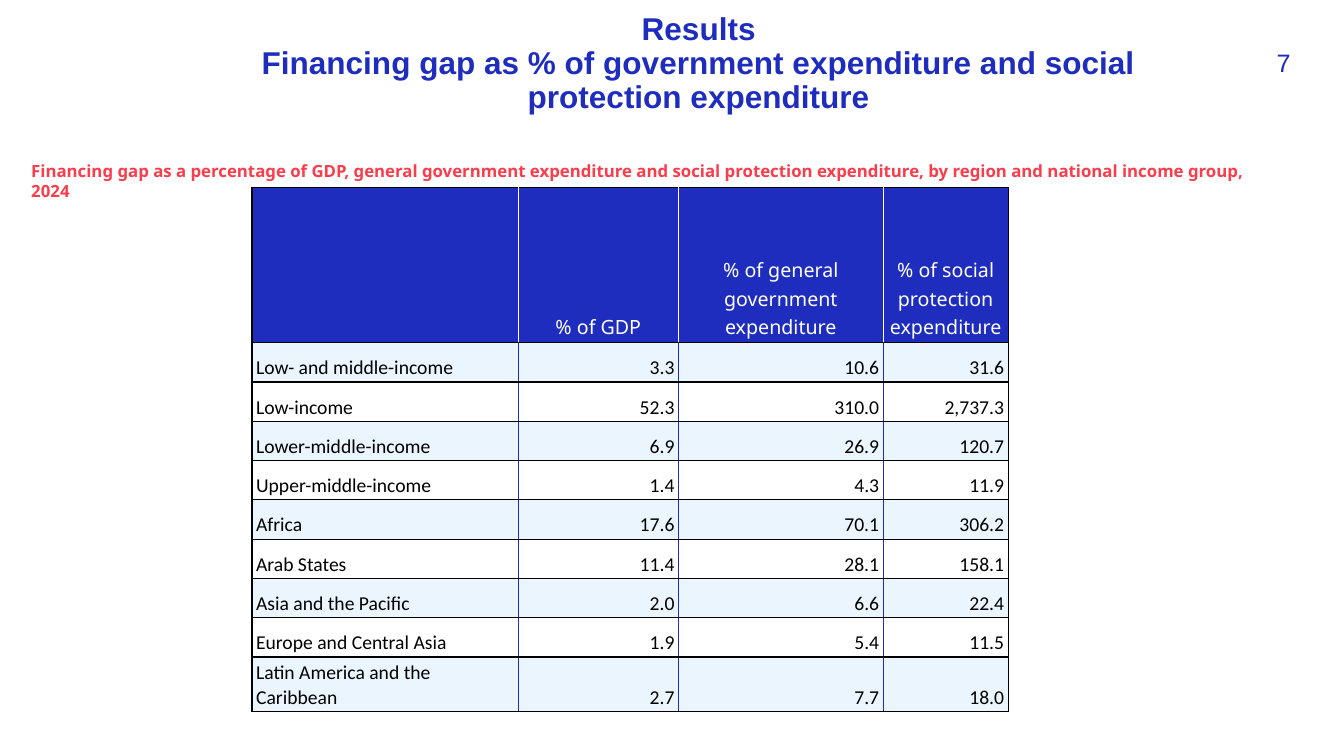
from lxml.etree import SubElement
from pptx import Presentation
from pptx.dml.color import RGBColor
from pptx.enum.text import MSO_ANCHOR as Anchor, PP_ALIGN as Align
from pptx.oxml.ns import qn
from pptx.util import Pt

PX = 9144
BLUE = RGBColor(0x1E, 0x2D, 0xBE)
RED = RGBColor(0xFA, 0x3C, 0x4B)
PALE = RGBColor(0xEB, 0xF5, 0xFD)
WHITE = RGBColor(0xFF, 0xFF, 0xFF)
BLACK = RGBColor(0, 0, 0)

TITLE = ("Results\nFinancing gap as % of government expenditure "
         "and social protection expenditure")
CAPTION = ("Financing gap as a percentage of GDP, general government expenditure and "
           "social protection expenditure, by region and national income group, 2024")
ROWS = [
    ("", "% of GDP", "% of general government expenditure",
     "% of social protection expenditure"),
    ("Low- and middle-income", "3.3", "10.6", "31.6"),
    ("Low-income", "52.3", "310.0", "2,737.3"),
    ("Lower-middle-income", "6.9", "26.9", "120.7"),
    ("Upper-middle-income", "1.4", "4.3", "11.9"),
    ("Africa", "17.6", "70.1", "306.2"),
    ("Arab States", "11.4", "28.1", "158.1"),
    ("Asia and the Pacific", "2.0", "6.6", "22.4"),
    ("Europe and Central Asia", "1.9", "5.4", "11.5"),
    ("Latin America and the Caribbean", "2.7", "7.7", "18.0"),
]
COLUMN_WIDTHS = [264, 159, 203, 124]
HEADER_HEIGHT = 154
ROW_HEIGHT = 39


def style(para, size, face, color, bold=False, align=Align.LEFT, spacing=None):
    para.alignment = align
    para.line_spacing = spacing
    for span in para.runs:
        span.font.size = Pt(size)
        span.font.name = face
        span.font.bold = bold
        span.font.color.rgb = color


def set_margins(target, across, down):
    target.margin_left = target.margin_right = across * PX
    target.margin_top = target.margin_bottom = down * PX


def add_label(page, area, text, *look, **layout):
    box = page.shapes.add_textbox(*(length * PX for length in area))
    frame = box.text_frame
    frame.word_wrap = True
    set_margins(frame, 0, 0)
    para = frame.paragraphs[0]
    para.text = text
    style(para, *look, **layout)


def add_borders(cell, left, right):
    properties = cell._tc.get_or_add_tcPr()
    for side, color in zip("LRTB", (left, right, BLACK, BLACK)):
        line = SubElement(properties, qn(f"a:ln{side}"), w=str(Pt(1)))
        fill = SubElement(line, qn("a:solidFill"))
        SubElement(fill, qn("a:srgbClr"), val=str(color))


def fill_cell(cell, text, row, column):
    header = row == 0
    inner = WHITE if header else BLUE
    last = len(COLUMN_WIDTHS) - 1
    add_borders(cell, BLACK if column == 0 else inner, BLACK if column == last else inner)
    if header or row % 2:
        cell.fill.solid()
        cell.fill.fore_color.rgb = BLUE if header else PALE
    else:
        cell.fill.background()
    cell.vertical_anchor = Anchor.BOTTOM
    set_margins(cell, 4, 2)
    para = cell.text_frame.paragraphs[0]
    para.text = text
    if header:
        style(para, 14, "Noto Sans", WHITE, align=Align.CENTER, spacing=1.07)
    else:
        align = Align.RIGHT if column else Align.LEFT
        style(para, 14, "Calibri", BLACK, align=align, spacing=1.07)


def add_gap_table(page, left, top):
    height = HEADER_HEIGHT + ROW_HEIGHT * (len(ROWS) - 1)
    table = page.shapes.add_table(
        len(ROWS), len(COLUMN_WIDTHS),
        left * PX, top * PX, sum(COLUMN_WIDTHS) * PX, height * PX).table
    for column, width in zip(table.columns, COLUMN_WIDTHS):
        column.width = width * PX
    for row, texts in enumerate(ROWS):
        table.rows[row].height = (ROW_HEIGHT if row else HEADER_HEIGHT) * PX
        for column, text in enumerate(texts):
            fill_cell(table.cell(row, column), text, row, column)


def build_results(page):
    add_label(page, (234, 13, 918, 43), TITLE, 22.5, "Arial", BLUE,
              bold=True, align=Align.CENTER, spacing=0.9)
    add_label(page, (1221, 47, 59, 31), "7", 18, "Arial", BLUE, align=Align.RIGHT)
    add_label(page, (31, 159, 1226, 43), CAPTION, 12, "Noto Sans", RED, bold=True)
    add_gap_table(page, 250, 186)


def main():
    deck = Presentation()
    deck.slide_width = 1333 * PX
    deck.slide_height = 750 * PX
    build_results(deck.slides.add_slide(deck.slide_layouts[6]))
    deck.save("out.pptx")


if __name__ == "__main__":
    main()
